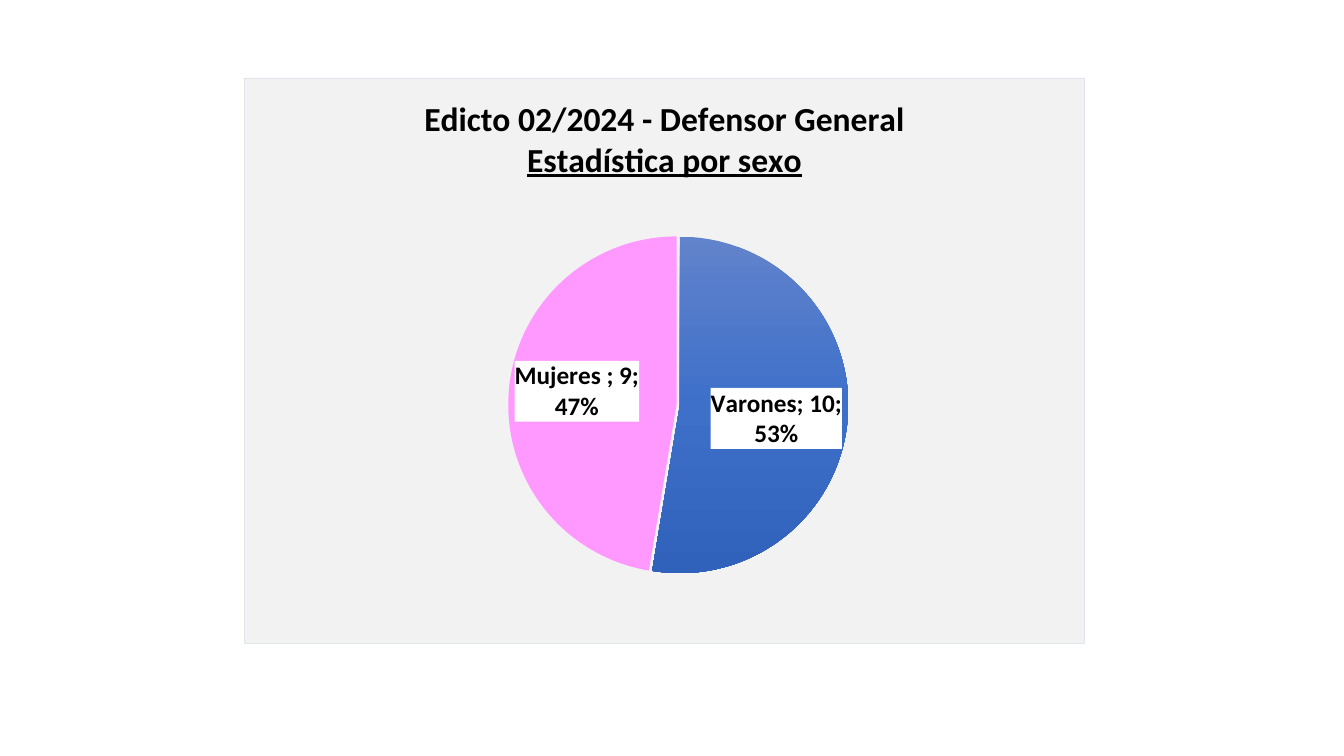
from lxml import etree
from pptx import Presentation
from pptx.chart.data import CategoryChartData
from pptx.dml.color import RGBColor
from pptx.enum.chart import XL_CHART_TYPE, XL_LABEL_POSITION
from pptx.oxml import parse_xml
from pptx.oxml.ns import nsdecls, qn
from pptx.util import Inches, Pt

FONT = "Calibri"
BLACK = "000000"
SEXES = {"Varones": 10, "Mujeres ": 9}
TITLE_LINES = ["Edicto 02/2024 - Defensor General", "Estadística por sexo"]
PLOT_AREA = {"x": 0.124, "y": 0.28, "w": 0.781, "h": 0.595}
MEN_GRADIENT = [(0, "6183CB"), (50, "3E70CA"), (100, "3062BB")]
WOMEN_PINK = "FF99FF"


def color(hex_code):
    """Return the colour for a hex string."""
    return RGBColor.from_string(hex_code)


def style_font(font, size, bold=False):
    """Apply the common typeface and black colour."""
    font.name, font.size, font.bold = FONT, Pt(size), bold
    font.color.rgb = color(BLACK)


def add_sex_pie(slide):
    """Add the pie chart with its values."""
    counts = CategoryChartData()
    counts.categories = list(SEXES)
    counts.add_series("Series 1", list(SEXES.values()))
    frame = slide.shapes.add_chart(
        XL_CHART_TYPE.PIE, Inches(2.42), Inches(0.77), Inches(8.34), Inches(5.62), counts)
    pie = frame.chart
    pie.has_legend = False
    pie.plots[0].vary_by_categories = True
    style_font(pie.font, 10)
    return pie


def write_title(pie):
    """Write the two title lines, the second one underlined."""
    title = pie.chart_title
    title.include_in_layout = False
    heading = title.text_frame
    heading.text = "\n".join(TITLE_LINES)
    for line in heading.paragraphs:
        style_font(line.runs[0].font, 24, bold=True)
    heading.paragraphs[-1].runs[0].font.underline = True


def place_plot(pie):
    """Fix the inner plot area as fractions of the chart."""
    plot_area = pie.plots[0]._element.getparent()
    for old_layout in plot_area.findall(qn("c:layout")):
        plot_area.remove(old_layout)
    layout = parse_xml(f"<c:layout {nsdecls('c')}><c:manualLayout/></c:layout>")
    settings = {"layoutTarget": "inner", "xMode": "edge", "yMode": "edge", **PLOT_AREA}
    for tag, value in settings.items():
        etree.SubElement(layout[0], qn(f"c:{tag}")).set("val", str(value))
    plot_area.insert(0, layout)


def fill_background(pie):
    """Give the chart its grey fill and thin border."""
    background = parse_xml(
        f'<c:spPr {nsdecls("c", "a")}>'
        '<a:solidFill><a:srgbClr val="F2F2F2"/></a:solidFill>'
        f'<a:ln w="{Pt(0.75)}"><a:solidFill><a:srgbClr val="E0E5EB"/></a:solidFill></a:ln>'
        '</c:spPr>')
    pie._chartSpace.chart.addnext(background)


def color_slices(series):
    """Shade the men's slice, pull it out a little, and fill the women's."""
    men, women = series.points[0], series.points[1]
    stops = "".join(f'<a:gs pos="{position * 1000}"><a:srgbClr val="{shade}"/></a:gs>'
                    for position, shade in MEN_GRADIENT)
    men.format.line.fill.background()
    men_slice = series._element.find(qn("c:dPt"))
    men_slice.find(qn("c:spPr")).insert(0, parse_xml(
        f'<a:gradFill {nsdecls("a")}><a:gsLst>{stops}</a:gsLst>'
        '<a:lin ang="5400000" scaled="0"/></a:gradFill>'))
    men_slice.find(qn("c:spPr")).addprevious(
        parse_xml(f'<c:explosion {nsdecls("c")} val="2"/>'))
    women.format.fill.solid()
    women.format.fill.fore_color.rgb = color(WOMEN_PINK)
    women.format.line.fill.background()


def label_slices(series):
    """Show category, value and percentage on white boxes."""
    labels = series.data_labels
    labels.show_category_name = True
    labels.show_value = True
    labels.show_percentage = True
    labels.show_legend_key = False
    labels.position = XL_LABEL_POSITION.INSIDE_END
    style_font(labels.font, 18, bold=True)
    labels._element.find(qn("c:txPr")).addprevious(parse_xml(
        f'<c:spPr {nsdecls("c", "a")}>'
        '<a:solidFill><a:srgbClr val="FFFFFF"/></a:solidFill></c:spPr>'))


def main():
    """Build the slide and save it."""
    deck = Presentation()
    deck.slide_width, deck.slide_height = Inches(13.33), Inches(7.5)
    slide = deck.slides.add_slide(deck.slide_layouts[6])
    pie = add_sex_pie(slide)
    write_title(pie)
    place_plot(pie)
    fill_background(pie)
    series = pie.plots[0].series[0]
    color_slices(series)
    label_slices(series)
    deck.save("out.pptx")


if __name__ == "__main__":
    main()
